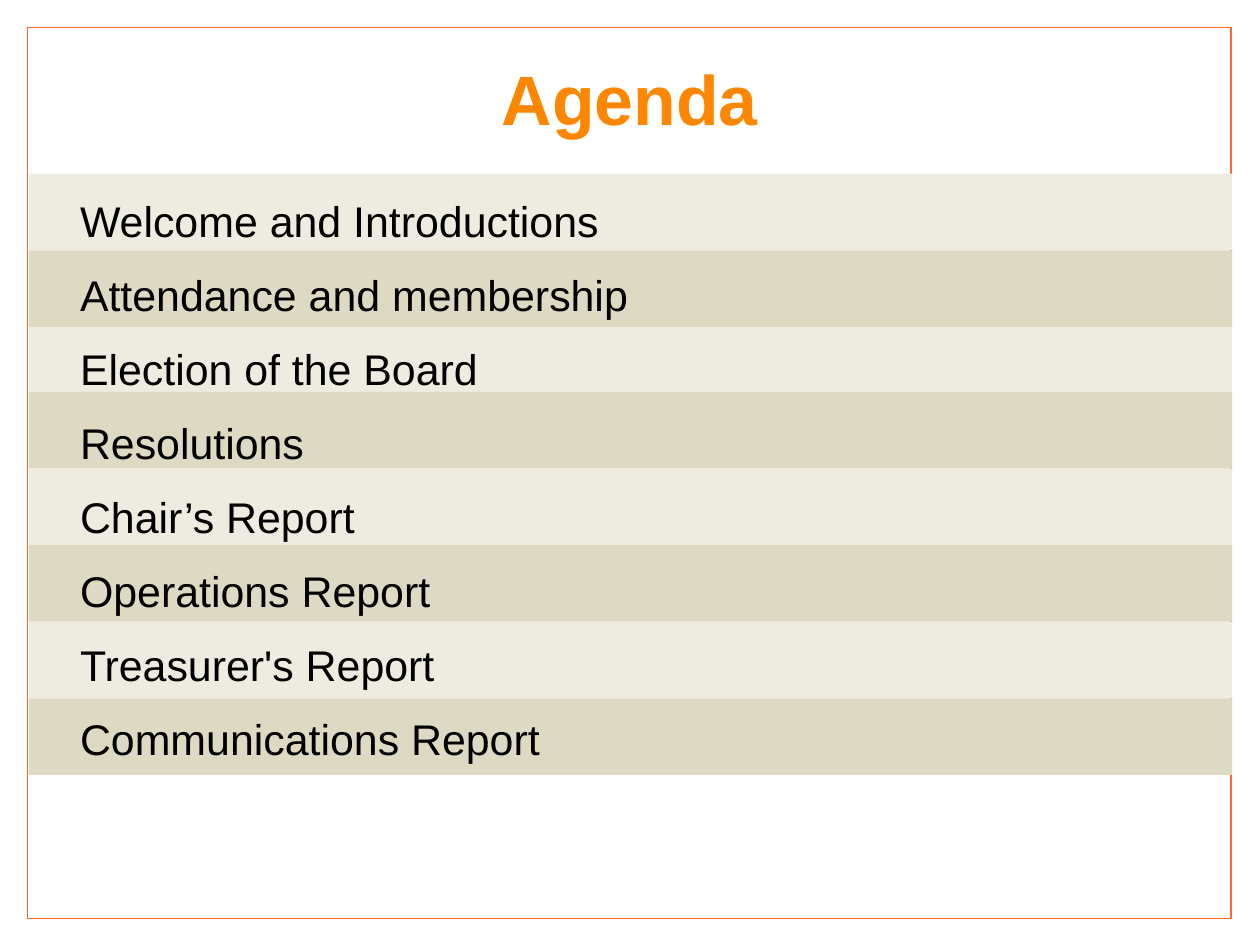
from pptx import Presentation
from pptx import util as u
from pptx.dml import color
from pptx.enum import shapes, text

THEME = {
    "font": "Arial",
    "paper": "FFFFFF", "frame": "FF6633", "title": "FF8700", "body": "000000",
    "bands": ("EEECE1", "DDD9C3"),
    "title_size": 44, "body_size": 27,
}
CM_PER_INCH = 2.54
AGENDA = (
    "Welcome and Introductions", "Attendance and membership",
    "Election of the Board", "Resolutions", "Chair’s Report",
    "Operations Report", "Treasurer's Report", "Communications Report",
)


def add_box(left, top, width, height, fill, line=None):
    shape = slide.shapes.add_shape(
        shapes.MSO_SHAPE.RECTANGLE, *map(u.Inches, (left, top, width, height)))
    shape.shadow.inherit = False
    shape.fill.solid()
    shape.fill.fore_color.rgb = color.RGBColor.from_string(fill)
    if line:
        shape.line.color.rgb = color.RGBColor.from_string(line)
        shape.line.width = u.Pt(0.75)
    else:
        shape.line.fill.background()


def add_text(top, height, lines, size, ink, bold, anchor, alignment):
    shape = slide.shapes.add_textbox(
        *map(u.Inches, (0.55, top, 9.92, height)))
    frame = shape.text_frame
    frame_format = {"word_wrap": True, "vertical_anchor": anchor,
                    "margin_left": 0, "margin_right": 0,
                    "margin_top": 0, "margin_bottom": 0}
    for name, value in frame_format.items():
        setattr(frame, name, value)
    frame.text = "\n".join(lines)
    for paragraph in frame.paragraphs:
        paragraph.alignment = alignment
        font = paragraph.runs[0].font
        font.name, font.size, font.bold = THEME["font"], u.Pt(size), bold
        font.color.rgb = color.RGBColor.from_string(ink)
    return frame


# Slide of 28 by 21 centimetres
presentation = Presentation()
presentation.slide_width = u.Inches(28 / CM_PER_INCH)
presentation.slide_height = u.Inches(21 / CM_PER_INCH)
slide = presentation.slides.add_slide(presentation.slide_layouts[6])

# Page frame
add_box(0.24, 0.24, 10.53, 7.8, THEME["paper"], THEME["frame"])

# Alternating bands, the third one slightly lower
band_top = 1.52
for index in range(len(AGENDA)):
    band_height = 0.57 if index == 2 else 0.67
    add_box(0.25, band_top, 10.53, band_height, THEME["bands"][index % 2])
    band_top += band_height

# Title
add_text(0.16, 1.38, ["Agenda"], THEME["title_size"], THEME["title"], True,
         text.MSO_ANCHOR.MIDDLE, text.PP_ALIGN.CENTER)

# Agenda items
items = add_text(1.7, 5.18, AGENDA, THEME["body_size"], THEME["body"], False,
                 text.MSO_ANCHOR.TOP, text.PP_ALIGN.LEFT)
for paragraph in items.paragraphs:
    paragraph_properties = paragraph._p.get_or_add_pPr()
    paragraph_properties.set("marL", str(u.Inches(0.15)))
    paragraph_properties.set("indent", "0")
for paragraph in items.paragraphs[1:]:
    paragraph.space_before = u.Pt(14.2)

presentation.save("out.pptx")
